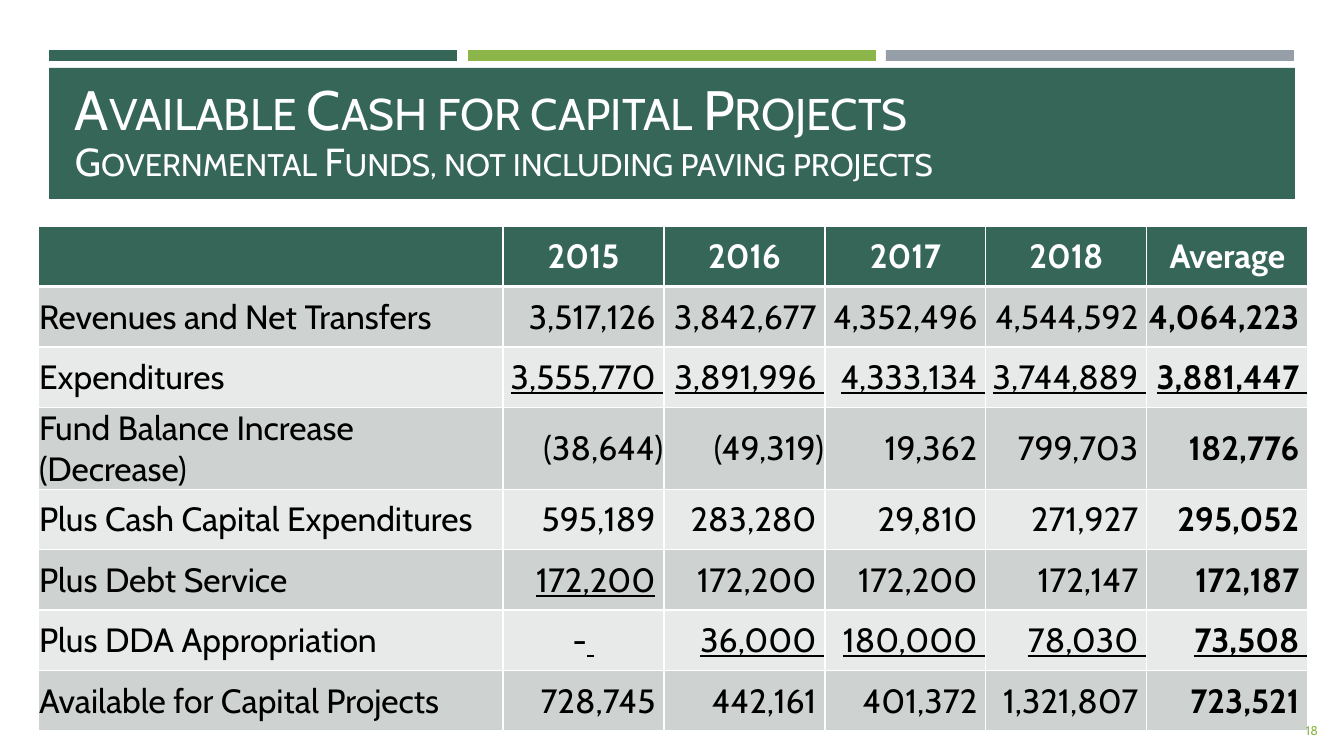
from lxml.etree import SubElement
from pptx import Presentation
from pptx.dml.color import RGBColor
from pptx.enum.shapes import MSO_SHAPE as Shape
from pptx.enum.text import MSO_ANCHOR as Anchor, PP_ALIGN as Align
from pptx.oxml.ns import qn
from pptx.util import Pt

SCALE = 914400 / 100.8
FONT = "Cabin"
COLORS = {
    "green": "366658", "lime": "8CB64A", "gray": "969FA7",
    "white": "FFFFFF", "black": "000000",
    "band_dark": "CED3D1", "band_light": "E8EAEA",
}
BLOCKS = [
    ("green", 49, 50, 408, 11),
    ("lime", 468, 50, 408, 11),
    ("gray", 886, 50, 408, 11),
    ("green", 49, 68, 1246, 131),
]
TITLE = [
    ("Available Cash for capital Projects", 39.6),
    ("Governmental Funds, not including paving projects", 27.9),
]
PAGE_NUMBER = "18"
HEADER = ["", "2015", "2016", "2017", "2018", "Average"]
ROWS = [
    ["Revenues and Net Transfers", "3,517,126", "3,842,677", "4,352,496", "4,544,592", "4,064,223"],
    ["Expenditures", "3,555,770", "3,891,996", "4,333,134", "3,744,889", "3,881,447"],
    ["Fund Balance Increase (Decrease)", "(38,644)", "(49,319)", "19,362", "799,703", "182,776"],
    ["Plus Cash Capital Expenditures", "595,189", "283,280", "29,810", "271,927", "295,052"],
    ["Plus Debt Service", "172,200", "172,200", "172,200", "172,147", "172,187"],
    ["Plus DDA Appropriation", "-", "36,000", "180,000", "78,030", "73,508"],
    ["Available for Capital Projects", "728,745", "442,161", "401,372", "1,321,807", "723,521"],
]
UNDERLINED_ROWS = (2, 6)
SPLIT_UNDERLINES = {(5, 1): (True, False), (6, 1): (False, True)}
TABLE_BOX = (38, 226, 1270, 484)
LABEL_WIDTH, VALUE_WIDTH = 465, 161


def px(*lengths):
    return [round(length * SCALE) for length in lengths]


def color(name):
    return RGBColor.from_string(COLORS[name])


def add_run(paragraph, text, size, color_name, **formats):
    run = paragraph.add_run()
    run.text = text
    for name, value in {"name": FONT, "size": Pt(size), **formats}.items():
        setattr(run.font, name, value)
    run.font.color.rgb = color(color_name)
    return run


def add_text_box(slide, box, anchor, align):
    frame = slide.shapes.add_textbox(*px(*box)).text_frame
    frame.word_wrap = True
    frame.vertical_anchor = anchor
    frame.paragraphs[0].alignment = align
    return frame.paragraphs[0]


def add_borders(cell, row):
    properties = cell._tc.get_or_add_tcPr()
    thick_side = {0: "lnB", 1: "lnT"}.get(row)
    for side in ("lnL", "lnR", "lnT", "lnB"):
        width = Pt(3 if side == thick_side else 1)
        line = SubElement(properties, qn(f"a:{side}"), w=str(width))
        fill = SubElement(line, qn("a:solidFill"))
        SubElement(fill, qn("a:srgbClr"), val=COLORS["white"])


def cell_runs(text, row, column):
    if row == 0 or column == 0:
        return [(text, False)] if text else []
    if (row, column) in SPLIT_UNDERLINES:
        return list(zip((text, " "), SPLIT_UNDERLINES[row, column]))
    gap = "" if text.endswith(")") else " "
    return [(text + gap, row in UNDERLINED_ROWS)]


def fill_cell(cell, text, row, column):
    add_borders(cell, row)
    cell.fill.solid()
    band = "band_dark" if row % 2 else "band_light"
    cell.fill.fore_color.rgb = color(band if row else "green")
    cell.vertical_anchor = Anchor.MIDDLE
    for side, margin in {"left": 1, "right": 1, "top": 1, "bottom": 0}.items():
        setattr(cell, f"margin_{side}", px(margin)[0])
    paragraph = cell.text_frame.paragraphs[0]
    if row == 0 or text == "-":
        paragraph.alignment = Align.CENTER
    else:
        paragraph.alignment = Align.RIGHT if column else Align.LEFT
    bold = row == 0 or column == len(HEADER) - 1
    for run_text, underline in cell_runs(text, row, column):
        add_run(paragraph, run_text, 24, "black" if row else "white",
                bold=bold, underline=underline)


def add_cash_table(slide):
    data = [HEADER, *ROWS]
    table = slide.shapes.add_table(len(data), len(HEADER), *px(*TABLE_BOX)).table
    table.horz_banding = False
    for index, column in enumerate(table.columns):
        column.width = px(VALUE_WIDTH if index else LABEL_WIDTH)[0]
    for row, texts in enumerate(data):
        for column, text in enumerate(texts):
            fill_cell(table.cell(row, column), text, row, column)


def main():
    presentation = Presentation()
    presentation.slide_width, presentation.slide_height = px(1344, 756)
    slide = presentation.slides.add_slide(presentation.slide_layouts[6])

    for fill, *box in BLOCKS:
        shape = slide.shapes.add_shape(Shape.RECTANGLE, *px(*box))
        shape.shadow.inherit = False
        shape.fill.solid()
        shape.fill.fore_color.rgb = color(fill)
        shape.line.fill.background()

    title = add_text_box(slide, (65, 78, 1216, 112), Anchor.BOTTOM, Align.LEFT)
    title.line_spacing = 0.9
    for index, (text, size) in enumerate(TITLE):
        if index:
            title.add_line_break()
        run = add_run(title, text, size, "white")
        run.font._element.set("cap", "small")

    add_cash_table(slide)

    number = add_text_box(slide, (1212, 710, 116, 40), Anchor.MIDDLE, Align.RIGHT)
    add_run(number, PAGE_NUMBER, 9, "lime")
    presentation.save("out.pptx")


if __name__ == "__main__":
    main()
